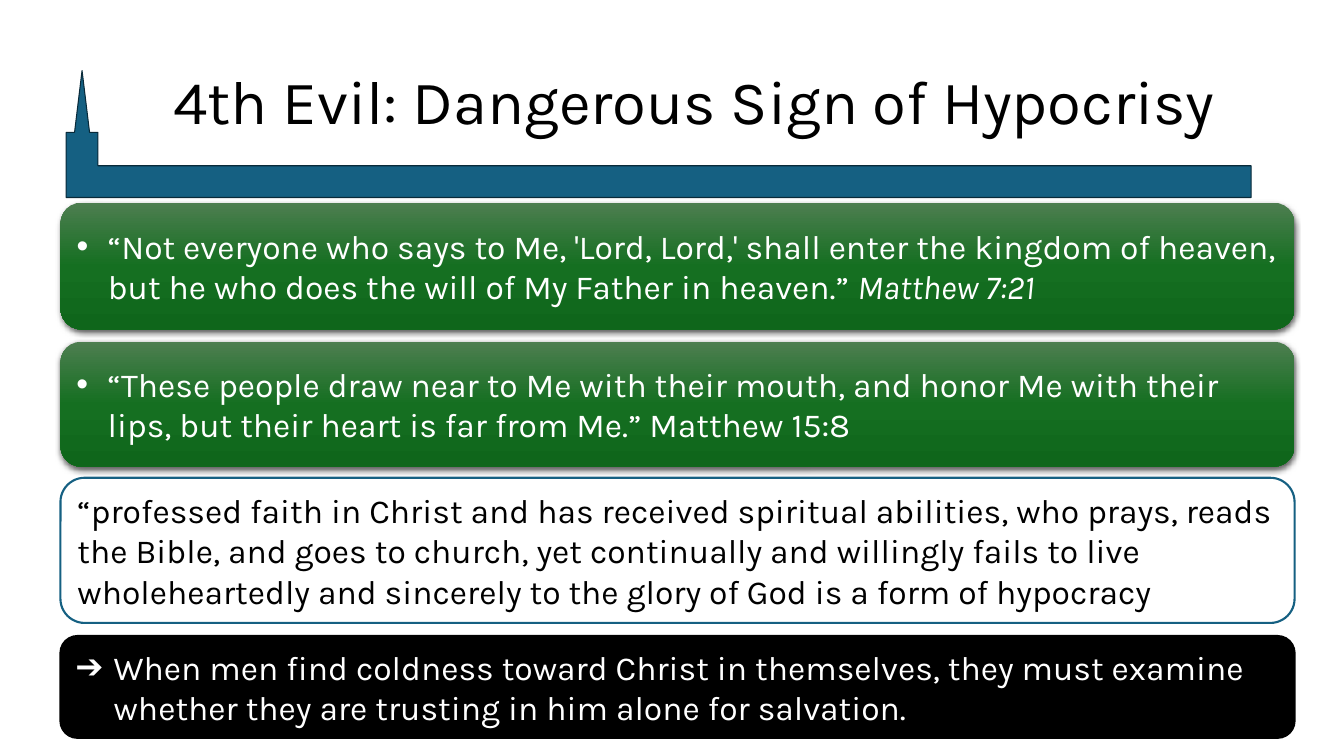
"""Build the slide on the fourth evil, a dangerous sign of hypocrisy."""
import pptx
import pptx.dml.color
import pptx.enum.shapes
import pptx.enum.text
import pptx.oxml.ns
import pptx.util
from lxml import etree

RGBColor = pptx.dml.color.RGBColor
Inches = pptx.util.Inches
Pt = pptx.util.Pt
qn = pptx.oxml.ns.qn
Shapes = pptx.enum.shapes.MSO_SHAPE
Align = pptx.enum.text.PP_ALIGN
Anchor = pptx.enum.text.MSO_ANCHOR

BLACK = RGBColor(0x00, 0x00, 0x00)
WHITE = RGBColor(0xFF, 0xFF, 0xFF)
BLUE = RGBColor(0x15, 0x60, 0x82)
DARK_BLUE = RGBColor(0x09, 0x2A, 0x39)
GREENS = (
    (0, RGBColor(0x4D, 0x7E, 0x50)),
    (50, RGBColor(0x15, 0x6F, 0x21)),
    (100, RGBColor(0x0F, 0x66, 0x1B)),
)


def add_color(parent, color):
    return etree.SubElement(parent, qn("a:srgbClr"), val=str(color))


class SlideBuilder:
    def __init__(self, slide, font_name="Karla", title_size=44, text_size=24):
        self.slide = slide
        self.font_name = font_name
        self.title_size = title_size
        self.text_size = text_size

    def style(self, paragraph, size, color):
        paragraph.alignment = Align.LEFT
        paragraph.font.name = self.font_name
        paragraph.font.size = Pt(size)
        paragraph.font.color.rgb = color

    def title(self, text, left, top, width, height):
        title = self.slide.shapes.title
        title.left, title.top = Inches(left), Inches(top)
        title.width, title.height = Inches(width), Inches(height)
        title.text_frame.text = text
        title.text_frame.vertical_anchor = Anchor.MIDDLE
        paragraph = title.text_frame.paragraphs[0]
        paragraph.line_spacing = 0.9
        self.style(paragraph, self.title_size, BLACK)

    def shape(self, kind, left, top, width, height, fill=None, line=None, line_width=1.5):
        shape = self.slide.shapes.add_shape(
            kind, Inches(left), Inches(top), Inches(width), Inches(height))
        shape.shadow.inherit = False
        if fill is not None:
            shape.fill.solid()
            shape.fill.fore_color.rgb = fill
        if line is None:
            shape.line.fill.background()
        else:
            shape.line.color.rgb = line
            shape.line.width = Pt(line_width)
        return shape

    def steeple(self, left, top, width, height):
        arrow = self.shape(Shapes.BENT_UP_ARROW, left, top, width, height,
                           BLUE, DARK_BLUE, 0.75)
        for index, value in enumerate((0.25, 0.059, 0.487)):
            arrow.adjustments[index] = value
        arrow._element.spPr.find(qn("a:xfrm")).set("flipH", "1")
        self.slide.shapes._spTree.insert(2, arrow._element)

    def panel(self, text, top, height, color, bullet=None, indent=0.31,
              citation=None, **style):
        panel = self.shape(Shapes.ROUNDED_RECTANGLE, 0.6, top, 12.24, height, **style)
        frame = panel.text_frame
        frame.word_wrap = True
        frame.vertical_anchor = Anchor.MIDDLE
        paragraph = frame.paragraphs[0]
        paragraph.add_run().text = text
        if citation:
            run = paragraph.add_run()
            run.text = citation
            run.font.italic = True
        if bullet:
            properties = paragraph._p.get_or_add_pPr()
            properties.set("marL", str(Inches(indent)))
            properties.set("indent", str(-Inches(indent)))
            etree.SubElement(properties, qn("a:buFont"), typeface="Arial")
            etree.SubElement(properties, qn("a:buChar"), char=bullet)
        self.style(paragraph, self.text_size, color)
        return panel

    def verse(self, text, top, height, citation=None):
        panel = self.panel(text, top, height, WHITE, "•", citation=citation)
        panel.fill.gradient()
        panel.fill.gradient_angle = 270
        properties = panel._element.spPr
        stops = properties.find(".//" + qn("a:gsLst"))
        for stop in list(stops):
            stops.remove(stop)
        for position, color in GREENS:
            add_color(etree.SubElement(stops, qn("a:gs"), pos=str(position * 1000)), color)
        shadow = etree.SubElement(
            properties.find(qn("a:effectLst")), qn("a:outerShdw"),
            blurRad=str(Pt(4.5)), dist=str(Pt(1.5)), dir="5400000",
            algn="ctr", rotWithShape="0")
        etree.SubElement(add_color(shadow, BLACK), qn("a:alpha"), val="63000")


def main():
    presentation = pptx.Presentation()
    presentation.slide_width = Inches(13.33)
    presentation.slide_height = Inches(7.5)
    builder = SlideBuilder(presentation.slides.add_slide(presentation.slide_layouts[5]))
    builder.steeple(0.74, 0.7, 11.67, 1.26)
    builder.title("4th Evil: Dangerous Sign of Hypocrisy", 1.62, 0.41, 10.8, 1.26)
    builder.verse(
        "“Not everyone who says to Me, 'Lord, Lord,' shall enter the kingdom of heaven, "
        "but he who does the will of My Father in heaven.” ",
        2.01, 1.26, citation="Matthew 7:21")
    builder.verse(
        "“These people draw near to Me with their mouth, and honor Me with their lips, "
        "but their heart is far from Me.” Matthew 15:8", 3.39, 1.24)
    builder.panel(
        "“professed faith in Christ and has received spiritual abilities, who prays, reads "
        "the Bible, and goes to church, yet continually and willingly fails to live "
        "wholeheartedly and sincerely to the glory of God is a form of hypocracy",
        4.74, 1.44, BLACK, fill=WHITE, line=BLUE)
    builder.panel(
        "When men find coldness toward Christ in themselves, they must examine whether "
        "they are trusting in him alone for salvation.",
        6.31, 1.01, WHITE, "➔", 0.38, fill=BLACK, line=BLACK)
    presentation.save("out.pptx")


if __name__ == "__main__":
    main()
